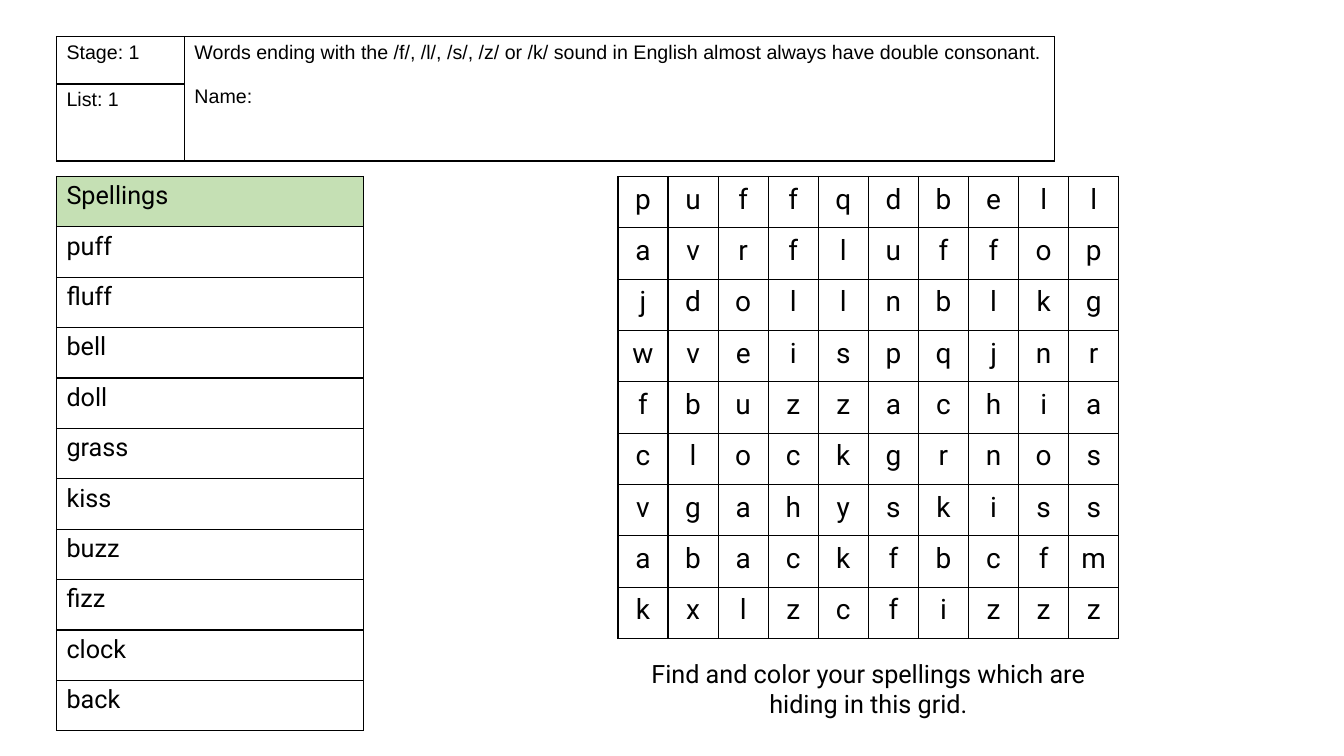
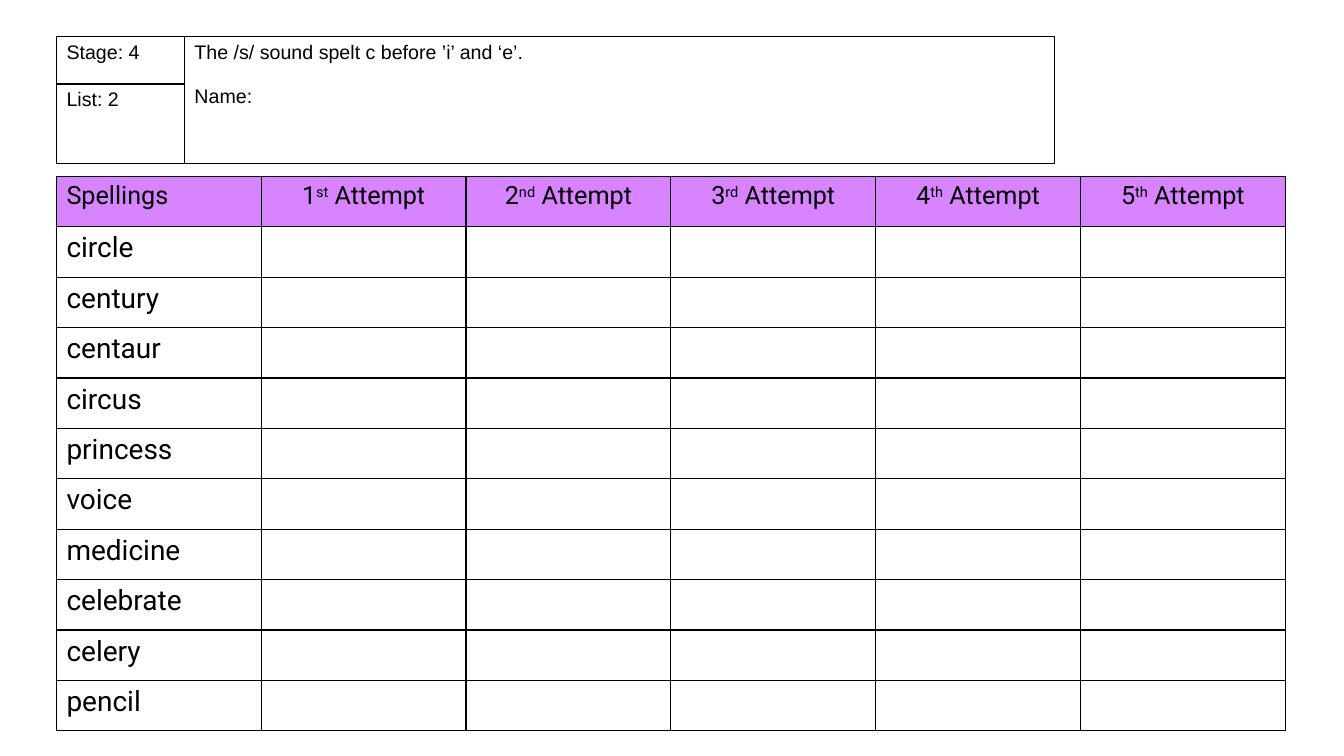
from dataclasses import dataclass

from lxml.etree import SubElement
from pptx import Presentation
from pptx.dml.color import RGBColor as RGB
from pptx.enum.text import MSO_AUTO_SIZE as AutoSize, PP_ALIGN as Align
from pptx.oxml.ns import qn
from pptx.util import Pt


@dataclass(frozen=True)
class Theme:
    ink: RGB = RGB(0x00, 0x00, 0x00)
    paper: RGB = RGB(0xFF, 0xFF, 0xFF)
    green: RGB = RGB(0xC5, 0xE0, 0xB4)
    purple: RGB = RGB(0xD8, 0x83, 0xFF)
    heading_font: str = "Arial"
    word_font: str = "Roboto"
    heading_size: int = 14
    word_size: int = 18
    large_size: int = 20
    border: int = 1


THEME = Theme()
LEFT, HEADER_TOP, BODY_TOP = 40.3, 26, 126
HEADER_COLUMNS, HEADER_ROWS = (91.4, 621.4), (34, 55)
LIST_WIDTH, WORD_ROW = 219.6, 36
ATTEMPT_WIDTH = 146.3
GRID_LEFT, GRID_WIDTH, GRID_ROW = 441.4, 357.8, 36.7
CAPTION_TOP, CAPTION_HEIGHT = 466.6, 51

DOUBLE_CONSONANT_WORDS = (
    "puff", "fluff", "bell", "doll", "grass", "kiss", "buzz", "fizz", "clock", "back",
)
SOFT_C_WORDS = (
    "circle", "century", "centaur", "circus", "princess",
    "voice", "medicine", "celebrate", "celery", "pencil",
)
LETTER_ROWS = (
    "puffqdbell",
    "avrfluffop",
    "jdollnblkg",
    "wveispqjnr",
    "fbuzzachia",
    "clockgrnos",
    "vgahyskiss",
    "abackfbcfm",
    "kxlzcfizzz",
)
ORDINALS = (("1", "st"), ("2", "nd"), ("3", "rd"), ("4", "th"), ("5", "th"))


def style_paragraph(paragraph, size, family=THEME.word_font, align=Align.LEFT):
    paragraph.alignment = align
    paragraph.font.size = Pt(size)
    paragraph.font.name = family
    paragraph.font.color.rgb = THEME.ink


def set_borders(cell):
    properties = cell._tc.get_or_add_tcPr()
    for position, side in enumerate(("lnL", "lnR", "lnT", "lnB")):
        edge = SubElement(properties, qn(f"a:{side}"), w=str(Pt(THEME.border)))
        ink = SubElement(SubElement(edge, qn("a:solidFill")), qn("a:srgbClr"))
        ink.set("val", str(THEME.ink))
        properties.insert(position, edge)


def fill_cell(cell, color):
    cell.fill.solid()
    cell.fill.fore_color.rgb = color


def add_ruled_table(slide, left, top, widths, heights):
    table = slide.shapes.add_table(
        len(heights), len(widths), Pt(left), Pt(top), Pt(sum(widths)), Pt(sum(heights))
    ).table
    table.first_row = table.horz_banding = False
    for column, width in zip(table.columns, widths):
        column.width = Pt(width)
    for row, height in zip(table.rows, heights):
        row.height = Pt(height)
    for cell in table.iter_cells():
        cell.fill.background()
        set_borders(cell)
    return table


def write_cell(cell, text, size, family=THEME.word_font, align=Align.LEFT):
    cell.text = text
    for paragraph in cell.text_frame.paragraphs:
        style_paragraph(paragraph, size, family, align)


def add_header(slide, stage, word_list, rule):
    table = add_ruled_table(slide, LEFT, HEADER_TOP, HEADER_COLUMNS, HEADER_ROWS)
    table.cell(0, 1).merge(table.cell(1, 1))
    labels = {
        (0, 0): f"Stage: {stage}",
        (1, 0): f"List: {word_list}",
        (0, 1): f"{rule}\nName:",
    }
    for place, text in labels.items():
        write_cell(table.cell(*place), text, THEME.heading_size, THEME.heading_font)
    name_line = table.cell(0, 1).text_frame.paragraphs[1]
    name_line.space_before = Pt(16)


def add_spellings(slide, words, widths, accent, size):
    table = add_ruled_table(slide, LEFT, BODY_TOP, widths, [WORD_ROW] * (len(words) + 1))
    for column in range(len(widths)):
        fill_cell(table.cell(0, column), accent)
    write_cell(table.cell(0, 0), "Spellings", THEME.word_size)
    for row, word in enumerate(words, 1):
        write_cell(table.cell(row, 0), word, size)
    return table


def write_attempt(cell, number, suffix):
    paragraph = cell.text_frame.paragraphs[0]
    for text in (number, suffix, " Attempt"):
        run = paragraph.add_run()
        run.text = text
        if text == suffix:
            run._r.get_or_add_rPr().set("baseline", "30000")
    style_paragraph(paragraph, THEME.word_size, align=Align.CENTER)


def add_letter_grid(slide):
    count = len(LETTER_ROWS[0])
    table = add_ruled_table(
        slide, GRID_LEFT, BODY_TOP, [GRID_WIDTH / count] * count, [GRID_ROW] * len(LETTER_ROWS)
    )
    for cell, letter in zip(table.iter_cells(), "".join(LETTER_ROWS)):
        fill_cell(cell, THEME.paper)
        cell.margin_left = cell.margin_right = Pt(5)
        cell.margin_top = cell.margin_bottom = Pt(0)
        write_cell(cell, letter, THEME.large_size, align=Align.CENTER)
        paragraph = cell.text_frame.paragraphs[0]
        paragraph.line_spacing = 1.2
        paragraph.space_after = Pt(10)


def add_caption(slide, text):
    frame = slide.shapes.add_textbox(
        Pt(GRID_LEFT), Pt(CAPTION_TOP), Pt(GRID_WIDTH), Pt(CAPTION_HEIGHT)
    ).text_frame
    frame.word_wrap = True
    frame.auto_size = AutoSize.SHAPE_TO_FIT_TEXT
    frame.text = text
    style_paragraph(frame.paragraphs[0], THEME.word_size, align=Align.CENTER)


def build_word_search(slide):
    add_spellings(slide, DOUBLE_CONSONANT_WORDS, [LIST_WIDTH], THEME.green, THEME.word_size)
    add_header(
        slide, 1, 1,
        "Words ending with the /f/, /l/, /s/, /z/ or /k/ sound in English "
        "almost always have double consonant.",
    )
    add_caption(slide, "Find and color your spellings which are hiding in this grid.")
    add_letter_grid(slide)


def build_attempts(slide):
    widths = [ATTEMPT_WIDTH] * (len(ORDINALS) + 1)
    table = add_spellings(slide, SOFT_C_WORDS, widths, THEME.purple, THEME.large_size)
    for column, (number, suffix) in enumerate(ORDINALS, 1):
        write_attempt(table.cell(0, column), number, suffix)
    add_header(slide, 4, 2, "The /s/ sound spelt c before ’i’ and ‘e’.")


def main():
    deck = Presentation()
    deck.slide_width, deck.slide_height = Pt(960), Pt(540)
    blank = deck.slide_layouts.get_by_name("Blank")
    for build in (build_word_search, build_attempts):
        build(deck.slides.add_slide(blank))
    deck.save("out.pptx")


if __name__ == "__main__":
    main()
